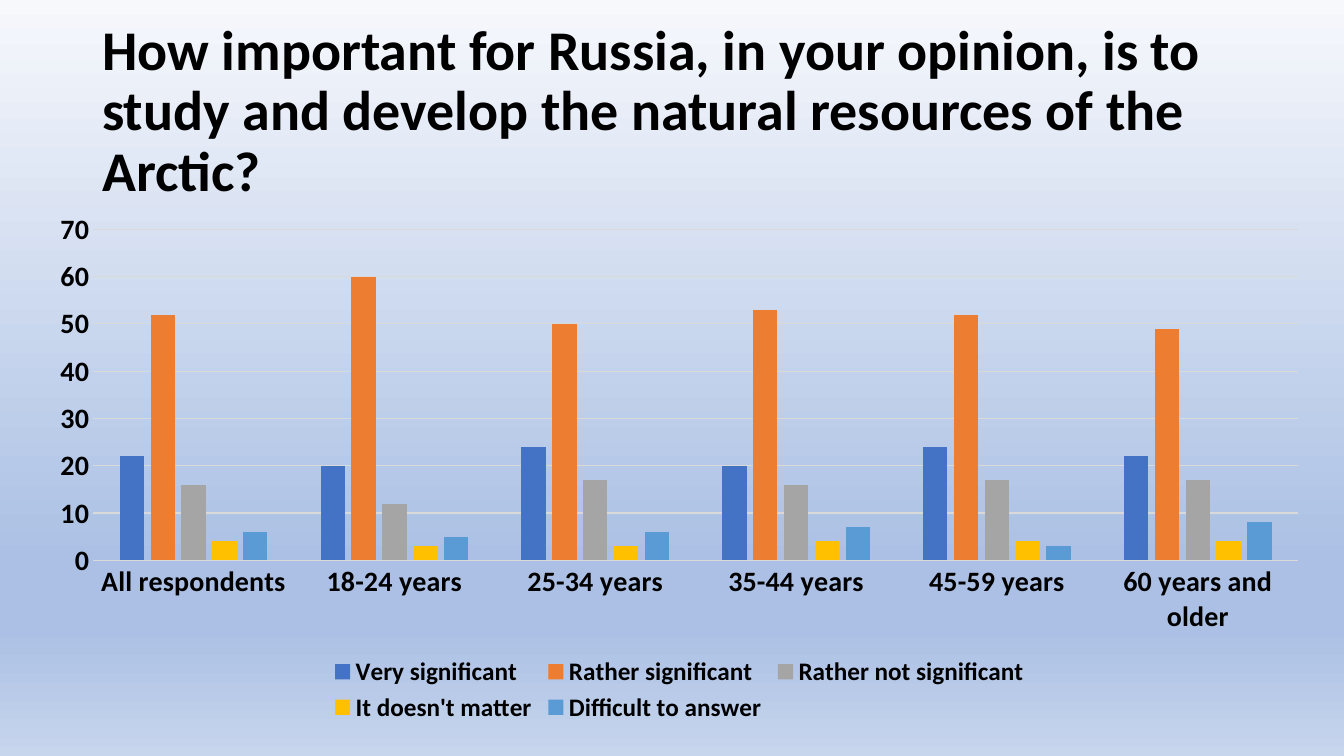
from copy import deepcopy
from dataclasses import dataclass

from pptx import Presentation
from pptx.chart.data import CategoryChartData
from pptx.dml.color import RGBColor
from pptx.enum.chart import XL_CHART_TYPE, XL_LEGEND_POSITION, XL_TICK_MARK
from pptx.enum.text import MSO_ANCHOR
from pptx.oxml.ns import qn
from pptx.util import Emu, Pt

EMU_PER_PX = 9525


@dataclass(frozen=True)
class Theme:
    font: str = "Calibri"
    ink: str = "000000"
    grid: str = "D9D9D9"
    title_size: int = 40
    axis_size: int = 20
    legend_size: int = 18
    base_size: int = 10
    hairline: float = 0.75
    backdrop: tuple = ((0, "F6F8FC"), (74, "ABC0E4"), (83, "ABC0E4"), (100, "C7D5ED"))


THEME = Theme()

QUESTION = (
    "How important for Russia, in your opinion, is to study and develop "
    "the natural resources of the Arctic?"
)
AGE_GROUPS = [
    "All respondents", "18-24 years", "25-34 years",
    "35-44 years", "45-59 years", "60 years and older",
]
ANSWERS = [
    ("Very significant", "4472C4", (22, 20, 24, 20, 24, 22)),
    ("Rather significant", "ED7D31", (52, 60, 50, 53, 52, 49)),
    ("Rather not significant", "A5A5A5", (16, 12, 17, 16, 17, 17)),
    ("It doesn't matter", "FFC000", (4, 3, 3, 4, 4, 4)),
    ("Difficult to answer", "5B9BD5", (6, 5, 6, 7, 3, 8)),
]


def px(length):
    return Emu(length * EMU_PER_PX)


def style_font(font, size, bold=True):
    font.name = THEME.font
    font.size = Pt(size)
    font.bold = bold
    font.color.rgb = RGBColor.from_string(THEME.ink)


def style_line(line):
    line.color.rgb = RGBColor.from_string(THEME.grid)
    line.width = Pt(THEME.hairline)


def paint_backdrop(slide):
    fill = slide.background.fill
    fill.gradient()
    fill.gradient_angle = 270
    stop_list = slide.element.find(".//" + qn("a:gsLst"))
    while len(stop_list) < len(THEME.backdrop):
        stop_list.append(deepcopy(stop_list[0]))
    for stop, (percent, colour) in zip(fill.gradient_stops, THEME.backdrop):
        stop.position = percent / 100
        stop.color.rgb = RGBColor.from_string(colour)


def add_question(slide, box):
    frame = slide.shapes.add_textbox(*map(px, box)).text_frame
    frame.word_wrap = True
    frame.vertical_anchor = MSO_ANCHOR.MIDDLE
    paragraph = frame.paragraphs[0]
    paragraph.line_spacing = 0.9
    run = paragraph.add_run()
    run.text = QUESTION
    style_font(run.font, THEME.title_size)


def style_axes(chart):
    for axis in (chart.category_axis, chart.value_axis):
        axis.major_tick_mark = XL_TICK_MARK.NONE
        axis.minor_tick_mark = XL_TICK_MARK.NONE
        style_font(axis.tick_labels.font, THEME.axis_size)
    style_line(chart.category_axis.format.line)
    percentages = chart.value_axis
    percentages.minimum_scale = 0
    percentages.maximum_scale = 70
    percentages.major_unit = 10
    percentages.format.line.fill.background()
    percentages.has_major_gridlines = True
    style_line(percentages.major_gridlines.format.line)


def add_answers_chart(slide, box):
    survey = CategoryChartData()
    survey.categories = AGE_GROUPS
    for answer, _, shares in ANSWERS:
        survey.add_series(answer, shares)
    chart = slide.shapes.add_chart(
        XL_CHART_TYPE.COLUMN_CLUSTERED, *map(px, box), survey
    ).chart
    chart.has_title = False
    style_font(chart.font, THEME.base_size, bold=False)
    style_axes(chart)
    columns = chart.plots[0]
    columns.gap_width = 219
    columns.overlap = -27
    columns.vary_by_categories = False
    for answer_columns, (_, colour, _) in zip(columns.series, ANSWERS):
        answer_columns.format.fill.solid()
        answer_columns.format.fill.fore_color.rgb = RGBColor.from_string(colour)
    chart.has_legend = True
    chart.legend.position = XL_LEGEND_POSITION.BOTTOM
    chart.legend.include_in_layout = False
    style_font(chart.legend.font, THEME.legend_size)


def main():
    deck = Presentation()
    deck.slide_width, deck.slide_height = px(1280), px(720)
    slide = deck.slides.add_slide(deck.slide_layouts[6])
    paint_backdrop(slide)
    add_question(slide, (88, 38, 1104, 139))
    add_answers_chart(slide, (33, 192, 1228, 501))
    deck.save("out.pptx")


if __name__ == "__main__":
    main()
